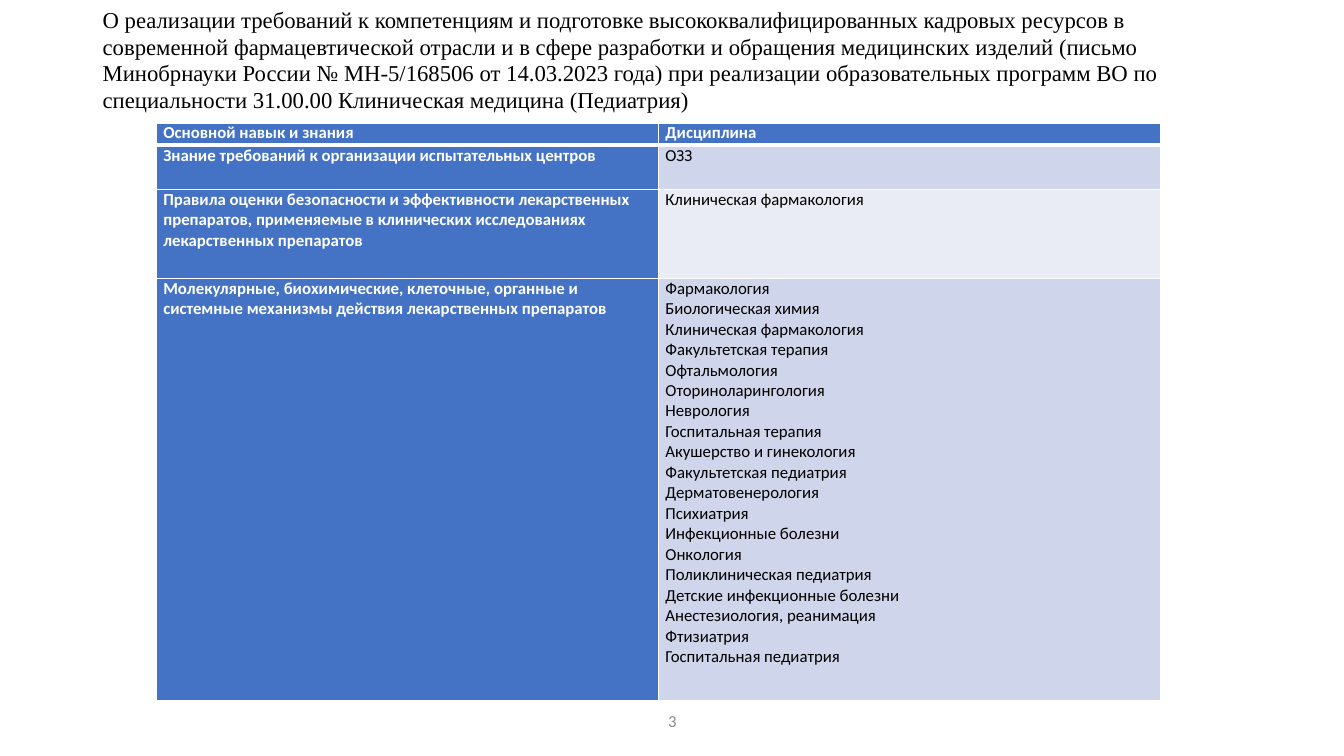
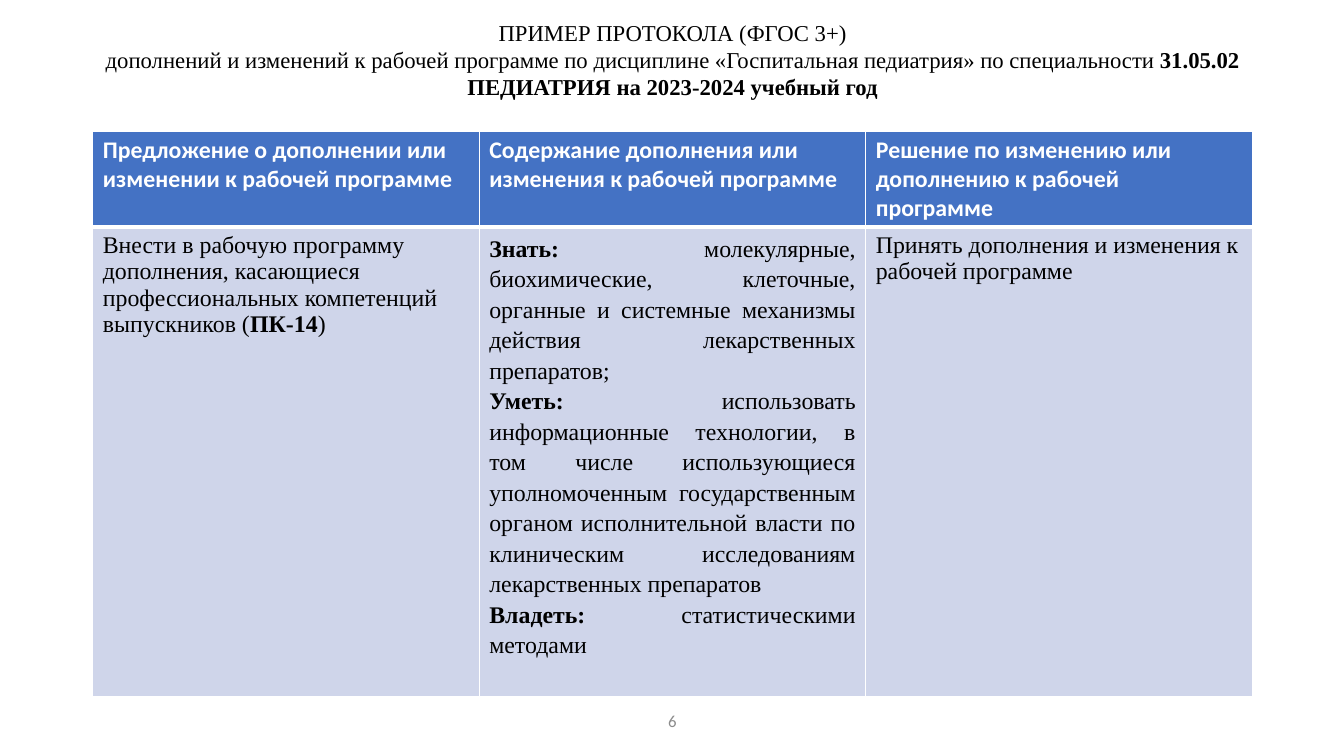
from dataclasses import dataclass

from lxml.etree import SubElement
from pptx import Presentation
from pptx.dml.color import RGBColor
from pptx.enum.text import MSO_ANCHOR, PP_ALIGN
from pptx.oxml.ns import qn
from pptx.util import Inches, Pt


@dataclass(frozen=True)
class Theme:
    """Colours, fonts and type sizes shared by the slides."""

    black: str = "000000"
    white: str = "FFFFFF"
    accent: str = "4472C4"
    band_dark: str = "CFD5EA"
    band_light: str = "E9EBF5"
    grey: str = "8C8C8C"
    sans: str = "Calibri"
    serif: str = "Times New Roman"
    title_size: float = 16.2
    large_size: float = 17
    small_size: float = 12
    thin_line: float = 1
    thick_line: float = 3


THEME = Theme()

SKILLS_TITLE = [
    "О реализации требований к компетенциям и подготовке высококвалифицированных "
    "кадровых ресурсов в современной фармацевтической отрасли и в сфере разработки "
    "и обращения медицинских изделий (письмо Минобрнауки России № МН-5/168506 от "
    "14.03.2023 года) при реализации образовательных программ ВО по специальности "
    "31.00.00 Клиническая медицина (Педиатрия)"
]
SKILLS_HEADER = ["Основной навык и знания", "Дисциплина"]
SKILLS = [
    ("Знание требований к организации испытательных центров", ["ОЗЗ"]),
    (
        "Правила оценки безопасности и эффективности лекарственных препаратов, "
        "применяемые в клинических исследованиях лекарственных препаратов",
        ["Клиническая фармакология"],
    ),
    (
        "Молекулярные, биохимические, клеточные, органные и системные механизмы "
        "действия лекарственных препаратов",
        [
            "Фармакология",
            "Биологическая химия",
            "Клиническая фармакология",
            "Факультетская терапия",
            "Офтальмология",
            "Оториноларингология",
            "Неврология",
            "Госпитальная терапия",
            "Акушерство и гинекология",
            "Факультетская педиатрия",
            "Дерматовенерология",
            "Психиатрия",
            "Инфекционные болезни",
            "Онкология",
            "Поликлиническая педиатрия",
            "Детские инфекционные болезни",
            "Анестезиология, реанимация",
            "Фтизиатрия",
            "Госпитальная педиатрия",
        ],
    ),
]

PROTOCOL_TITLE = [
    "ПРИМЕР ПРОТОКОЛА (ФГОС 3+)",
    [
        ("дополнений и изменений к рабочей программе по дисциплине "
         "«Госпитальная педиатрия» по специальности ", False),
        ("31.05.02 ПЕДИАТРИЯ на 2023-2024 учебный год", True),
    ],
]
PROTOCOL_HEADER = [
    "Предложение о дополнении или изменении к рабочей программе",
    "Содержание дополнения или изменения к рабочей программе",
    "Решение по изменению или дополнению к рабочей программе",
]
PROPOSAL = [[
    ("Внести в рабочую программу дополнения, касающиеся профессиональных "
     "компетенций выпускников (", False),
    ("ПК-14", True),
    (")", False),
]]
OUTCOMES = [
    [
        ("Знать:", True),
        (" молекулярные, биохимические, клеточные, органные и системные механизмы "
         "действия лекарственных препаратов;", False),
    ],
    [
        ("Уметь:", True),
        (" использовать информационные технологии, в том числе использующиеся "
         "уполномоченным государственным органом исполнительной власти по "
         "клиническим исследованиям лекарственных препаратов", False),
    ],
    [("Владеть:", True), (" статистическими методами", False)],
]
DECISION = ["Принять дополнения и изменения к рабочей программе"]


def write_text(frame, paragraphs, *, size, font=THEME.sans, color=THEME.black,
               bold=False, align=PP_ALIGN.LEFT, spacing=1.0):
    """Write paragraphs, each a string or a list of (text, bold) runs."""
    for index, content in enumerate(paragraphs):
        paragraph = frame.add_paragraph() if index else frame.paragraphs[0]
        paragraph.alignment = align
        paragraph.line_spacing = spacing
        runs = [(content, bold)] if isinstance(content, str) else content
        for text, run_bold in runs:
            run = paragraph.add_run()
            run.text = text
            run.font.name = font
            run.font.size = Pt(size)
            run.font.bold = run_bold
            run.font.color.rgb = RGBColor.from_string(color)


def add_text_box(slide, left, top, width, height, paragraphs, **text_format):
    """Add a wrapped, vertically centred text box."""
    box = slide.shapes.add_textbox(
        Inches(left), Inches(top), Inches(width), Inches(height))
    box.text_frame.word_wrap = True
    box.text_frame.vertical_anchor = MSO_ANCHOR.MIDDLE
    write_text(box.text_frame, paragraphs, **text_format)


def add_slide(presentation, title, number, title_align):
    """Add a blank slide with its title and page number."""
    slide = presentation.slides.add_slide(presentation.slide_layouts[6])
    add_text_box(slide, 0.92, 0.1, 11.5, 1, title, size=THEME.title_size,
                 font=THEME.serif, align=title_align, spacing=0.98)
    add_text_box(slide, 4.42, 6.95, 4.5, 0.4, [str(number)],
                 size=THEME.small_size, color=THEME.grey, align=PP_ALIGN.CENTER)
    return slide


def set_borders(cell, **widths):
    """Draw white cell borders, thin unless a side's width is given."""
    properties = cell._tc.get_or_add_tcPr()
    for side in "LRTB":
        width = widths.get(side, THEME.thin_line)
        line = SubElement(properties, qn(f"a:ln{side}"), w=str(Pt(width)))
        fill = SubElement(line, qn("a:solidFill"))
        SubElement(fill, qn("a:srgbClr"), val=THEME.white)


def fill_cell(cell, paragraphs, fill, insets=None, borders=None, **text_format):
    """Set the borders, fill, margins and text of a cell."""
    set_borders(cell, **(borders or {}))
    cell.fill.solid()
    cell.fill.fore_color.rgb = RGBColor.from_string(fill)
    if insets:
        horizontal, vertical = insets
        cell.margin_left = cell.margin_right = Inches(horizontal)
        cell.margin_top = cell.margin_bottom = Inches(vertical)
    write_text(cell.text_frame, paragraphs, **text_format)


def add_table(slide, left, top, width, row_heights, header, size, insets=None):
    """Add a table of equal columns with a filled header row."""
    table = slide.shapes.add_table(
        len(row_heights), len(header), Inches(left), Inches(top),
        Inches(width), Inches(sum(row_heights))).table
    table.first_row = table.horz_banding = False
    for row, height in zip(table.rows, row_heights):
        row.height = Inches(height)
    for column, text in enumerate(header):
        fill_cell(table.cell(0, column), [text], THEME.accent, insets,
                  {"B": THEME.thick_line}, size=size, color=THEME.white, bold=True)
    return table


def body_borders(row):
    """Return the border widths that match the header's thick rule."""
    return {"T": THEME.thick_line} if row == 1 else {}


def add_skills_slide(presentation):
    """Build the slide that maps skills to disciplines."""
    slide = add_slide(presentation, SKILLS_TITLE, 3, PP_ALIGN.LEFT)
    size, insets = THEME.small_size, (0.07, 0)
    table = add_table(slide, 1.55, 1.22, 9.96, [0.22, 0.44, 0.88, 4.19],
                      SKILLS_HEADER, size, insets)
    for row, (skill, disciplines) in enumerate(SKILLS, start=1):
        band = THEME.band_dark if row % 2 else THEME.band_light
        borders = body_borders(row)
        fill_cell(table.cell(row, 0), [skill], THEME.accent, insets, borders,
                  size=size, color=THEME.white, bold=True)
        fill_cell(table.cell(row, 1), disciplines, band, insets, borders, size=size)


def add_protocol_slide(presentation):
    """Build the slide with the sample protocol."""
    slide = add_slide(presentation, PROTOCOL_TITLE, 6, PP_ALIGN.CENTER)
    table = add_table(slide, 0.92, 1.3, 11.5, [0.95, 4.64],
                      PROTOCOL_HEADER, THEME.large_size)
    justified = {"align": PP_ALIGN.JUSTIFY, "spacing": 1.15}
    cells = [(PROPOSAL, {}), (OUTCOMES, justified), (DECISION, {})]
    for column, (paragraphs, text_format) in enumerate(cells):
        fill_cell(table.cell(1, column), paragraphs, THEME.band_dark,
                  borders=body_borders(1), size=THEME.large_size,
                  font=THEME.serif, **text_format)


def main():
    """Build and save the presentation."""
    presentation = Presentation()
    presentation.slide_width = Inches(13.33)
    presentation.slide_height = Inches(7.5)
    add_skills_slide(presentation)
    add_protocol_slide(presentation)
    presentation.save("out.pptx")


if __name__ == "__main__":
    main()
